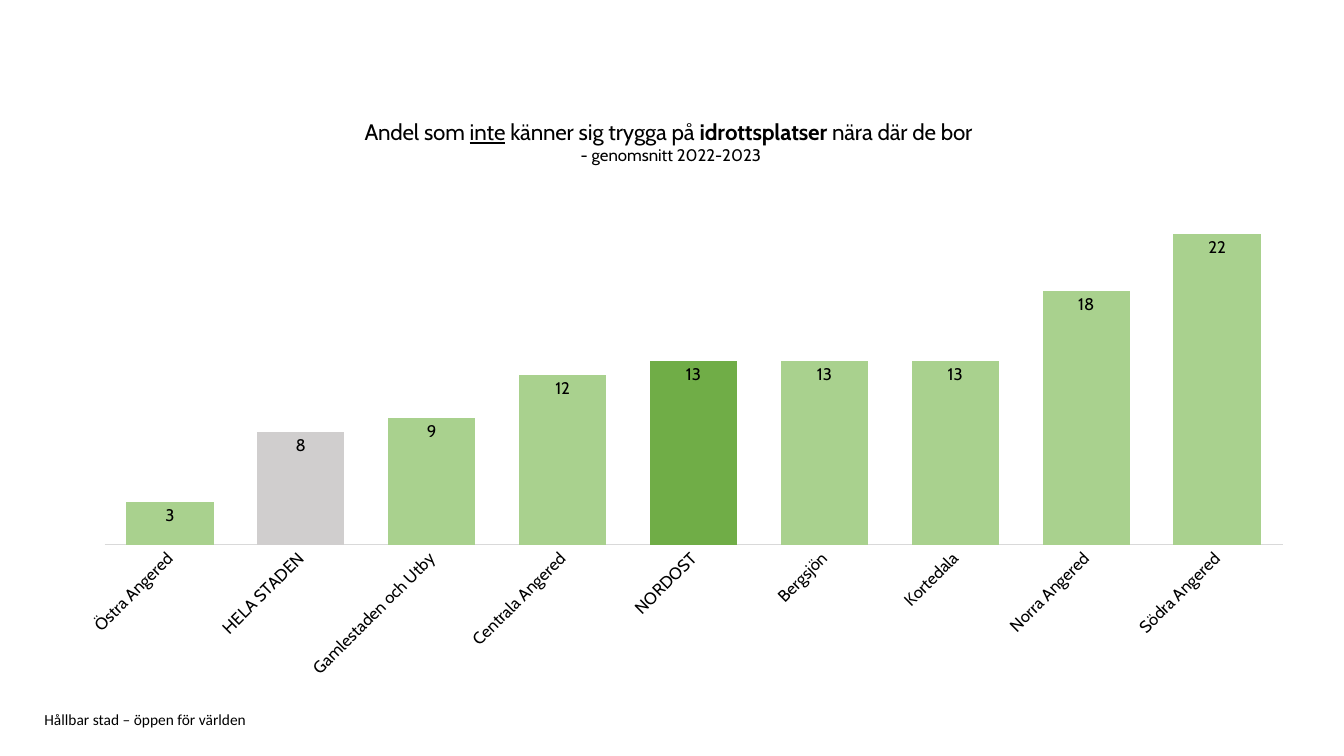
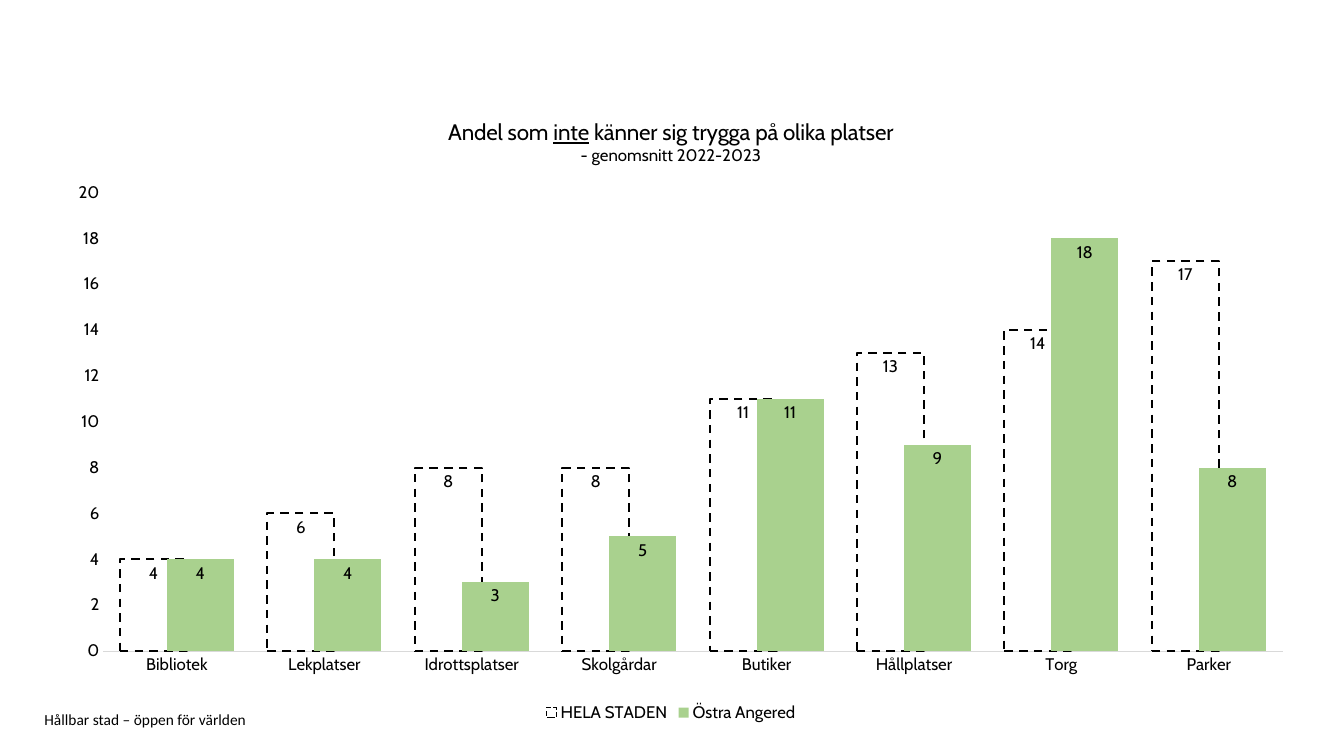
from lxml import etree
from pptx import Presentation
from pptx.chart.data import CategoryChartData
from pptx.dml.color import RGBColor
from pptx.enum import chart as ch, dml, text
from pptx.oxml import ns
from pptx.util import Inches, Pt

COLORS = {
    "text": "000000",
    "axis": "D9D9D9",
    "white": "FFFFFF",
    "area": "A9D18E",
    "northeast": "70AD47",
    "city": "D0CECE",
}
FONT = "Cabin"
FOOTER_FONT = "Calibri"
FOOTER = "Hållbar stad – öppen för världen"
SUBTITLE = "- genomsnitt 2022-2023"
LEFT = Inches(0.44)


class Deck:
    def __init__(self):
        self.prs = Presentation()
        self.prs.slide_width = Inches(13.33)
        self.prs.slide_height = Inches(7.5)
        self.s = None

    def rgb(self, name):
        return RGBColor.from_string(COLORS[name])

    def style(self, font, size, name=FONT):
        font.name = name
        font.size = Pt(size)
        font.bold = False
        font.color.rgb = self.rgb("text")

    def fill(self, item, color):
        item.format.fill.solid()
        item.format.fill.fore_color.rgb = self.rgb(color)

    def new_slide(self):
        self.s = self.prs.slides.add_slide(self.prs.slide_layouts[6])
        self.footer()

    def footer(self):
        box = self.s.shapes.add_textbox(LEFT, Inches(7.06), Inches(9.45), Inches(0.16))
        tf = box.text_frame
        tf.word_wrap = True
        tf.vertical_anchor = text.MSO_ANCHOR.MIDDLE
        tf.margin_left = tf.margin_right = tf.margin_top = tf.margin_bottom = 0
        tf.text = FOOTER
        self.style(tf.paragraphs[0].runs[0].font, 11, FOOTER_FONT)

    def column_chart(self, title, categories, series, plot_box, top, overlap=0):
        data = CategoryChartData()
        data.categories = categories
        for name, values, _ in series:
            data.add_series(name, values)
        chart = self.s.shapes.add_chart(
            ch.XL_CHART_TYPE.COLUMN_CLUSTERED,
            LEFT, Inches(0.96), Inches(12.43), Inches(6.25), data).chart
        self.style(chart.font, 12)
        chart.has_legend = False
        self.chart_title(chart, title)
        self.place_plot(chart, plot_box)
        self.axes(chart, top)
        plot = chart.plots[0]
        plot.gap_width = 50
        plot.overlap = overlap
        plot.vary_by_categories = False
        for ser, (_, _, color) in zip(plot.series, series):
            self.fill(ser, color)
            ser.invert_if_negative = False
            labels = ser.data_labels
            labels.show_value = True
            labels.position = ch.XL_LABEL_POSITION.INSIDE_END
            labels.number_format = "0"
            labels.number_format_is_linked = False
            self.style(labels.font, 12)
        return chart

    def chart_title(self, chart, pieces):
        chart.has_title = True
        chart.chart_title.include_in_layout = False
        tf = chart.chart_title.text_frame
        p = tf.paragraphs[0]
        for words, emphasis in pieces:
            r = p.add_run()
            r.text = words
            self.style(r.font, 16)
            r.font.underline = emphasis == "underline"
            r.font.bold = emphasis == "bold"
        p = tf.add_paragraph()
        p.text = SUBTITLE
        self.style(p.runs[0].font, 12)

    def place_plot(self, chart, box):
        area = chart.plots[0]._element.getparent()
        for old in area.findall(ns.qn("c:layout")):
            area.remove(old)
        layout = etree.Element(ns.qn("c:layout"))
        manual = etree.SubElement(layout, ns.qn("c:manualLayout"))
        settings = [("layoutTarget", "inner"), ("xMode", "edge"), ("yMode", "edge")]
        settings += zip("xywh", box)
        for tag, value in settings:
            etree.SubElement(manual, ns.qn("c:" + tag)).set("val", str(value))
        area.insert(0, layout)

    def axes(self, chart, top):
        for axis in (chart.category_axis, chart.value_axis):
            axis.has_major_gridlines = False
            axis.major_tick_mark = axis.minor_tick_mark = ch.XL_TICK_MARK.NONE
            self.style(axis.tick_labels.font, 12)
        line = chart.category_axis.format.line
        line.color.rgb = self.rgb("axis")
        line.width = Pt(0.75)
        values = chart.value_axis
        values.minimum_scale = 0
        values.maximum_scale = top
        values.format.line.fill.background()
        values.tick_labels.number_format = "0"
        values.tick_labels.number_format_is_linked = False

    def slant_categories(self, chart):
        body = chart.category_axis._element.find(ns.qn("c:txPr")).find(ns.qn("a:bodyPr"))
        body.set("rot", "-2700000")
        body.set("vert", "horz")

    def legend(self, chart):
        chart.has_legend = True
        chart.legend.position = ch.XL_LEGEND_POSITION.BOTTOM
        chart.legend.include_in_layout = False
        self.style(chart.legend.font, 12)

    def dash_outline(self, ser):
        line = ser.format.line
        line.color.rgb = self.rgb("text")
        line.width = Pt(1.5)
        line.dash_style = dml.MSO_LINE.DASH


def sports_grounds(deck):
    deck.new_slide()
    title = [("Andel som ", None), ("inte", "underline"), (" känner sig trygga på ", None),
             ("idrottsplatser", "bold"), (" nära där de bor ", None)]
    areas = ["Östra Angered", "HELA STADEN", "Gamlestaden och Utby", "Centrala Angered",
             "NORDOST", "Bergsjön", "Kortedala", "Norra Angered", "Södra Angered"]
    shares = [3, 8, 9, 12, 13, 13, 13, 18, 22]
    name = "".join(words for words, _ in title) + SUBTITLE
    chart = deck.column_chart(title, areas, [(name, shares, "area")],
                              (0.048, 0.151, 0.94, 0.56), 25)
    chart.value_axis.visible = False
    deck.slant_categories(chart)
    points = chart.plots[0].series[0].points
    for area, color in (("HELA STADEN", "city"), ("NORDOST", "northeast")):
        deck.fill(points[areas.index(area)], color)


def places(deck):
    deck.new_slide()
    title = [("Andel som ", None), ("inte", "underline"),
             (" känner sig trygga på olika platser", None)]
    kinds = ["Bibliotek", "Lekplatser", "Idrottsplatser", "Skolgårdar",
             "Butiker", "Hållplatser", "Torg", "Parker"]
    series = [("HELA STADEN", [4, 6, 8, 8, 11, 13, 14, 17], "white"),
              ("Östra Angered", [4, 4, 3, 5, 11, 9, 18, 8], "area")]
    chart = deck.column_chart(title, kinds, series,
                              (0.047, 0.152, 0.941, 0.728), 20, overlap=30)
    chart.value_axis.major_unit = 2
    deck.dash_outline(chart.plots[0].series[0])
    deck.legend(chart)


def main():
    deck = Deck()
    sports_grounds(deck)
    places(deck)
    deck.prs.save("out.pptx")


if __name__ == "__main__":
    main()
